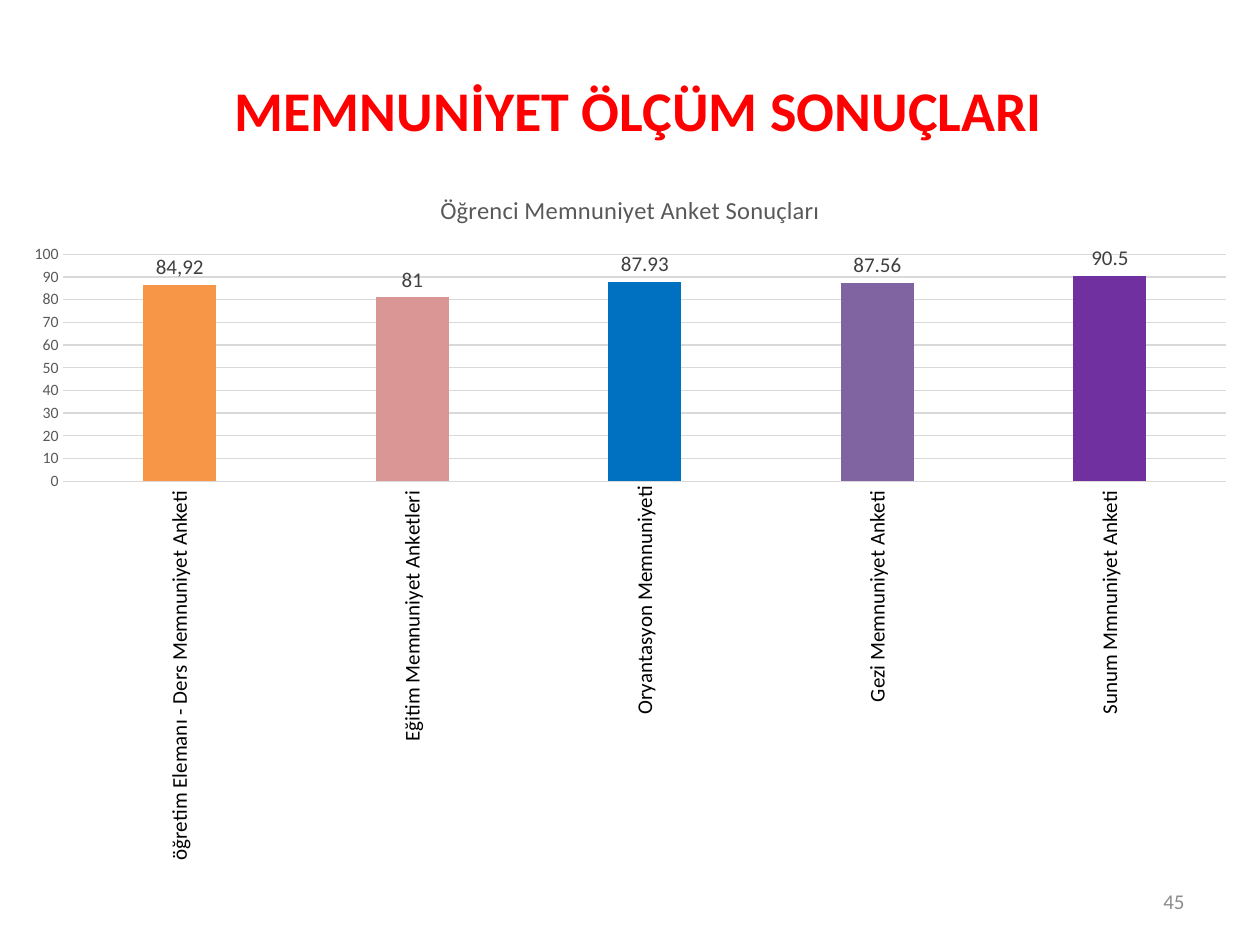
from lxml.etree import SubElement
from pptx import Presentation
from pptx.chart.data import CategoryChartData
from pptx.dml.color import RGBColor
from pptx.enum.chart import XL_CHART_TYPE as ChartType, XL_LABEL_POSITION as LabelPosition
from pptx.enum.chart import XL_TICK_MARK as TickMark
from pptx.enum.text import MSO_ANCHOR as Anchor, PP_ALIGN as Align
from pptx.oxml.ns import qn
from pptx.util import Inches, Pt

FONT = "Calibri"
WIDTH, HEIGHT = Inches(10), Inches(7.5)
BLACK = RGBColor(0x00, 0x00, 0x00)
RED = RGBColor(0xFF, 0x00, 0x00)
DARK_GREY = RGBColor(0x40, 0x40, 0x40)
GREY = RGBColor(0x59, 0x59, 0x59)
PAGE_GREY = RGBColor(0x8C, 0x8C, 0x8C)
LINE_GREY = RGBColor(0xD9, 0xD9, 0xD9)
ORANGE = RGBColor(0xF7, 0x96, 0x46)
PINK = RGBColor(0xD9, 0x96, 0x94)
BLUE = RGBColor(0x00, 0x70, 0xC0)
MAUVE = RGBColor(0x80, 0x64, 0xA2)
PURPLE = RGBColor(0x70, 0x30, 0xA0)

SURVEYS = [
    ("öğretim Elemanı - Ders Memnuniyet Anketi ", 86.68, ORANGE),
    ("Eğitim Memnuniyet Anketleri ", 81, PINK),
    ("Oryantasyon Memnuniyeti", 87.93, BLUE),
    ("Gezi Memnuniyet Anketi ", 87.56, MAUVE),
    ("Sunum Mmnuniyet Anketi ", 90.5, PURPLE),
]
FIRST_LABEL = "84,92"


def box(left, top, width, height):
    """Turn shares of the slide's size into lengths."""
    return (int(WIDTH * left), int(HEIGHT * top),
            int(WIDTH * width), int(HEIGHT * height))


def style_font(font, size, color, bold=False):
    font.name = FONT
    font.size = Pt(size)
    font.bold = bold
    font.color.rgb = color


def style_line(line):
    line.color.rgb = LINE_GREY
    line.width = Pt(0.75)


def add_text(slide, place, text, size, color, align, anchor=Anchor.TOP, bold=False):
    frame = slide.shapes.add_textbox(*place).text_frame
    frame.word_wrap = True
    frame.vertical_anchor = anchor
    frame.text = text
    paragraph = frame.paragraphs[0]
    paragraph.alignment = align
    style_font(paragraph.runs[0].font, size, color, bold)


def set_plot_layout(chart, **shares):
    """Fix the inner plot area at shares (x, y, w, h) of the chart."""
    plot_area = chart.plots[0]._element.getparent()
    layout = plot_area.find(qn("c:layout"))
    if layout is None:
        layout = SubElement(plot_area, qn("c:layout"))
        plot_area.insert(0, layout)
    manual = SubElement(layout, qn("c:manualLayout"))
    settings = {"layoutTarget": "inner", "xMode": "edge", "yMode": "edge", **shares}
    for name, value in settings.items():
        SubElement(manual, qn(f"c:{name}")).set("val", str(value))


def style_axes(chart):
    category_axis, value_axis = chart.category_axis, chart.value_axis
    for axis, size, color in ((category_axis, 12, BLACK), (value_axis, 9, GREY)):
        axis.major_tick_mark = axis.minor_tick_mark = TickMark.NONE
        style_font(axis.tick_labels.font, size, color)
    style_line(category_axis.format.line)
    text_body = category_axis._element.find(qn("c:txPr")).find(qn("a:bodyPr"))
    text_body.set("rot", "-5400000")
    text_body.set("vert", "horz")
    value_axis.minimum_scale, value_axis.maximum_scale = 0, 100
    value_axis.major_unit = 10
    value_axis.format.line.fill.background()
    style_line(value_axis.major_gridlines.format.line)


def style_bars(plot):
    plot.gap_width, plot.overlap = 219, -27
    plot.vary_by_categories = False
    series = plot.series[0]
    series.format.fill.solid()
    series.format.fill.fore_color.rgb = MAUVE
    for index, (_, _, color) in enumerate(SURVEYS):
        fill = series.points[index].format.fill
        fill.solid()
        fill.fore_color.rgb = color
    labels = series.data_labels
    labels.show_value = True
    labels.position = LabelPosition.OUTSIDE_END
    style_font(labels.font, 12, DARK_GREY)
    first = series.points[0].data_label
    first.text_frame.text = FIRST_LABEL
    first.position = LabelPosition.OUTSIDE_END
    style_font(first.text_frame.paragraphs[0].runs[0].font, 12, DARK_GREY)


def add_survey_chart(slide, place):
    data = CategoryChartData()
    data.categories = [name for name, _, _ in SURVEYS]
    data.add_series("Series 1", [value for _, value, _ in SURVEYS])
    chart = slide.shapes.add_chart(ChartType.COLUMN_CLUSTERED, *place, data).chart
    style_font(chart.font, 10, BLACK)
    chart.has_legend = False
    chart.has_title = True
    title = chart.chart_title
    title.include_in_layout = False
    title.text_frame.text = "Öğrenci Memnuniyet Anket Sonuçları"
    style_font(title.text_frame.paragraphs[0].runs[0].font, 14, GREY)
    style_axes(chart)
    style_bars(chart.plots[0])
    set_plot_layout(chart, x=0.044, y=0.123, w=0.936, h=0.32)


def main():
    presentation = Presentation()
    presentation.slide_width, presentation.slide_height = WIDTH, HEIGHT
    slide = presentation.slides.add_slide(presentation.slide_layouts[6])
    add_text(slide, box(0.717, 0.927, 0.233, 0.053), "45", 12, PAGE_GREY,
             Align.RIGHT, Anchor.MIDDLE)
    add_survey_chart(slide, box(0.007, 0.177, 0.986, 0.75))
    add_text(slide, box(0.062, 0.073, 0.89, 0.085), "MEMNUNİYET ÖLÇÜM SONUÇLARI",
             32, RED, Align.CENTER, bold=True)
    presentation.save("out.pptx")


if __name__ == "__main__":
    main()
